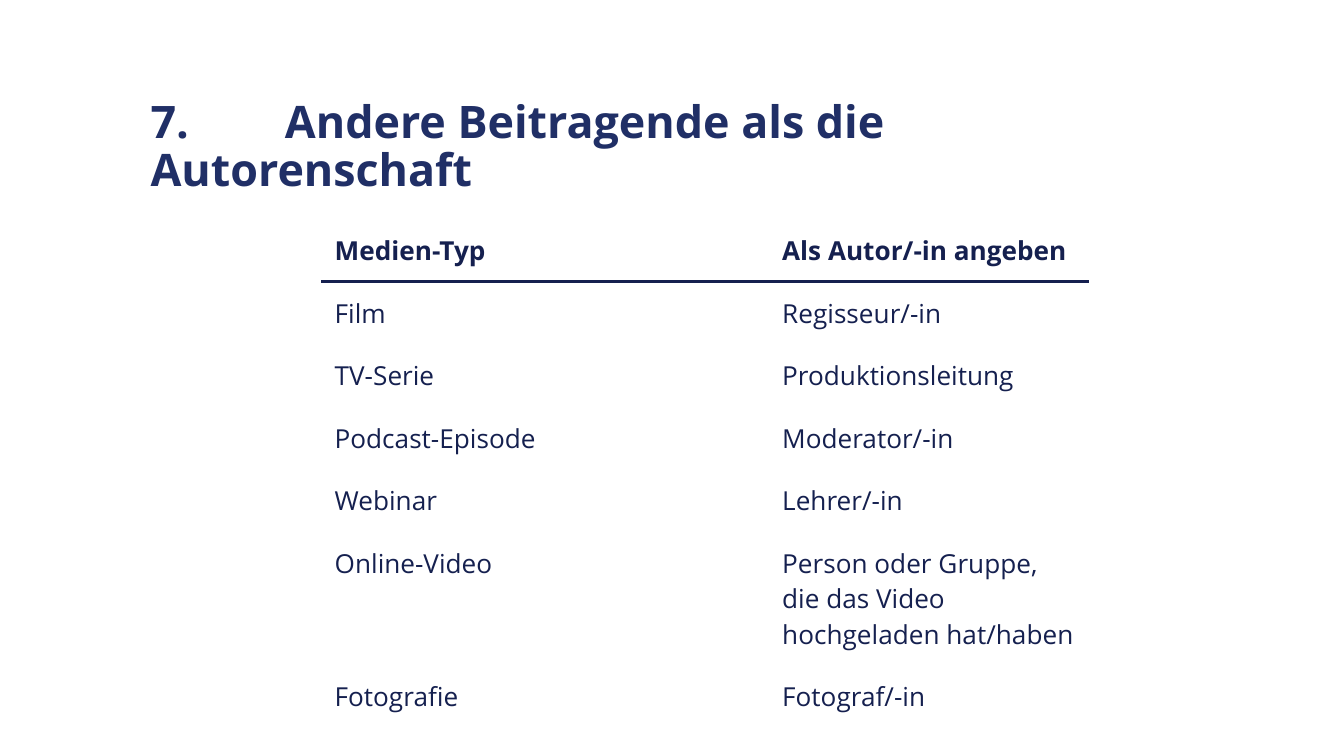
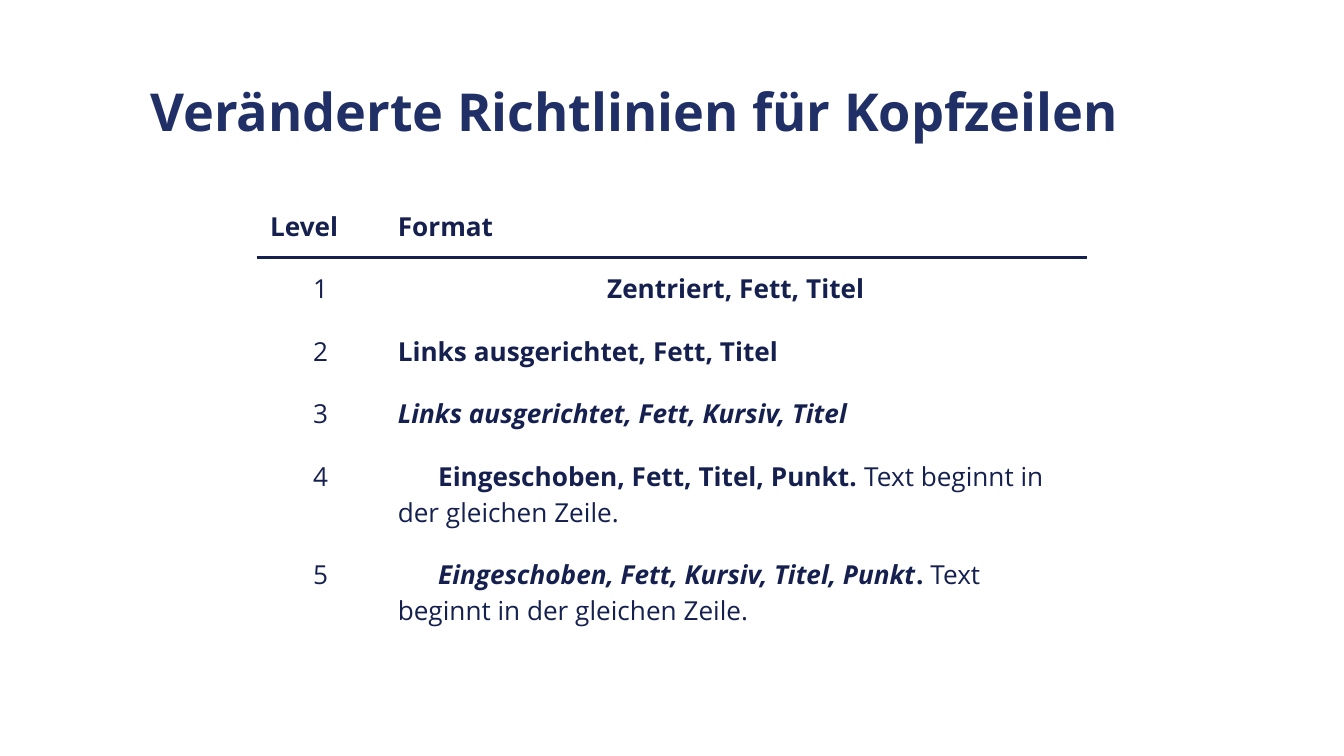
from lxml.etree import SubElement
from pptx import Presentation
from pptx.dml.color import RGBColor
from pptx.enum.text import MSO_ANCHOR, MSO_AUTO_SIZE, PP_ALIGN
from pptx.oxml.ns import qn
from pptx.util import Inches, Pt

FONT = "Open Sans"
TITLE_BLUE = RGBColor(0x20, 0x2F, 0x66)
TEXT_BLUE = RGBColor(0x15, 0x20, 0x4F)
PLAIN_TABLE_STYLE = "{2D5ABB26-0587-4C30-8999-92F81FD0307C}"
LEFT, CENTER = PP_ALIGN.LEFT, PP_ALIGN.CENTER
MARGIN = Inches(0.1)

deck = Presentation()
deck.slide_width = Inches(10)
deck.slide_height = deck.slide_width * 9 // 16


def add_titled_page(text, top, size):
    page = deck.slides.add_slide(deck.slide_layouts[5])
    title = page.shapes.title
    title.left, title.top = Inches(1.02), Inches(top)
    title.width, title.height = Inches(7.87), Inches(0.63)
    frame = title.text_frame
    frame.text = text
    frame.word_wrap = True
    frame.auto_size = MSO_AUTO_SIZE.NONE
    frame.vertical_anchor = MSO_ANCHOR.TOP
    frame.margin_left = frame.margin_right = frame.margin_bottom = MARGIN
    frame.margin_top = Inches(0.15)  # makes up for the tight first line
    para = frame.paragraphs[0]
    para.alignment = LEFT
    para.line_spacing = 0.9
    tabs = SubElement(para._p.get_or_add_pPr(), qn("a:tabLst"))
    SubElement(tabs, qn("a:tab"), pos=str(Inches(1)), algn="l")
    para.font.name = FONT
    para.font.size = Pt(size)
    para.font.bold = True
    para.font.color.rgb = TITLE_BLUE
    return page


def add_ruled_table(page, left, top, widths, heights, rows):
    """Add a table ruled below its header; a cell is (alignment, indent, runs)."""
    frame = page.shapes.add_table(
        len(rows), len(widths), Inches(left), Inches(top),
        Inches(sum(widths)), Inches(sum(heights)))
    table = frame.table
    table.horz_banding = False
    table._tbl.tblPr.find(qn("a:tableStyleId")).text = PLAIN_TABLE_STYLE
    for column, width in zip(table.columns, widths):
        column.width = Inches(width)
    for row, height in zip(table.rows, heights):
        row.height = Inches(height)

    for row_index, row in enumerate(rows):
        for column_index, (alignment, indent, runs) in enumerate(row):
            cell = table.cell(row_index, column_index)
            cell.margin_left = cell.margin_right = MARGIN
            cell.margin_top = cell.margin_bottom = MARGIN
            for side in ("lnL", "lnR", "lnT", "lnB"):
                border = SubElement(cell._tc.get_or_add_tcPr(), qn(f"a:{side}"),
                                    w=str(Pt(1.5)))
                if (row_index, side) in ((0, "lnB"), (1, "lnT")):
                    fill = SubElement(border, qn("a:solidFill"))
                    SubElement(fill, qn("a:srgbClr"), val=str(TEXT_BLUE))
                else:
                    SubElement(border, qn("a:noFill"))
            cell.fill.background()

            para = cell.text_frame.paragraphs[0]
            para.alignment = alignment
            if indent:
                properties = para._p.get_or_add_pPr()
                properties.set("marL", "0")
                properties.set("indent", str(Inches(indent)))
            for text, bold, italic in runs:
                span = para.add_run()
                span.text = text
                span.font.name = FONT
                span.font.size = Pt(14)
                span.font.color.rgb = TEXT_BLUE
                span.font.bold = bold
                span.font.italic = italic


# Slide 1: contributors by media type
page = add_titled_page("7.\tAndere Beitragende als die Autorenschaft", 0.59, 24)
contributors = [
    ("Medien-Typ", "Als Autor/-in angeben"),
    ("Film", "Regisseur/-in"),
    ("TV-Serie", "Produktionsleitung"),
    ("Podcast-Episode", "Moderator/-in"),
    ("Webinar", "Lehrer/-in"),
    ("Online-Video", "Person oder Gruppe, die das Video hochgeladen hat/haben"),
    ("Fotografie", "Fotograf/-in"),
]
rows = [[(LEFT, 0, [(text, index == 0, False)]) for text in pair]
        for index, pair in enumerate(contributors)]
add_ruled_table(page, 2.39, 1.63, [3.33, 2.38],
                [0.44, 0.41, 0.41, 0.41, 0.41, 0.63, 0.41], rows)

# Slide 2: heading levels
page = add_titled_page("Veränderte Richtlinien für Kopfzeilen", 0.49, 28)
same_line = ("Text beginnt in der gleichen Zeile.", False, False)
formats = [
    (CENTER, 0, [("Zentriert, Fett, Titel", True, False)]),
    (LEFT, 0, [("Links ausgerichtet, Fett, Titel", True, False)]),
    (LEFT, 0, [("Links ausgerichtet, Fett, Kursiv, Titel", True, True)]),
    (LEFT, 0.3, [("Eingeschoben, Fett, Titel, Punkt. ", True, False), same_line]),
    (LEFT, 0.3, [("Eingeschoben, Fett, Kursiv, Titel, Punkt", True, True),
                 (". ", True, False), same_line]),
]
rows = [[(LEFT, 0, [(text, True, False)]) for text in ("Level", "Format")]]
for level, heading_format in enumerate(formats, start=1):
    rows.append([(CENTER, 0, [(str(level), False, False)]), heading_format])
add_ruled_table(page, 1.91, 1.45, [0.95, 5.23], [0.42] * len(rows), rows)

deck.save("out.pptx")
